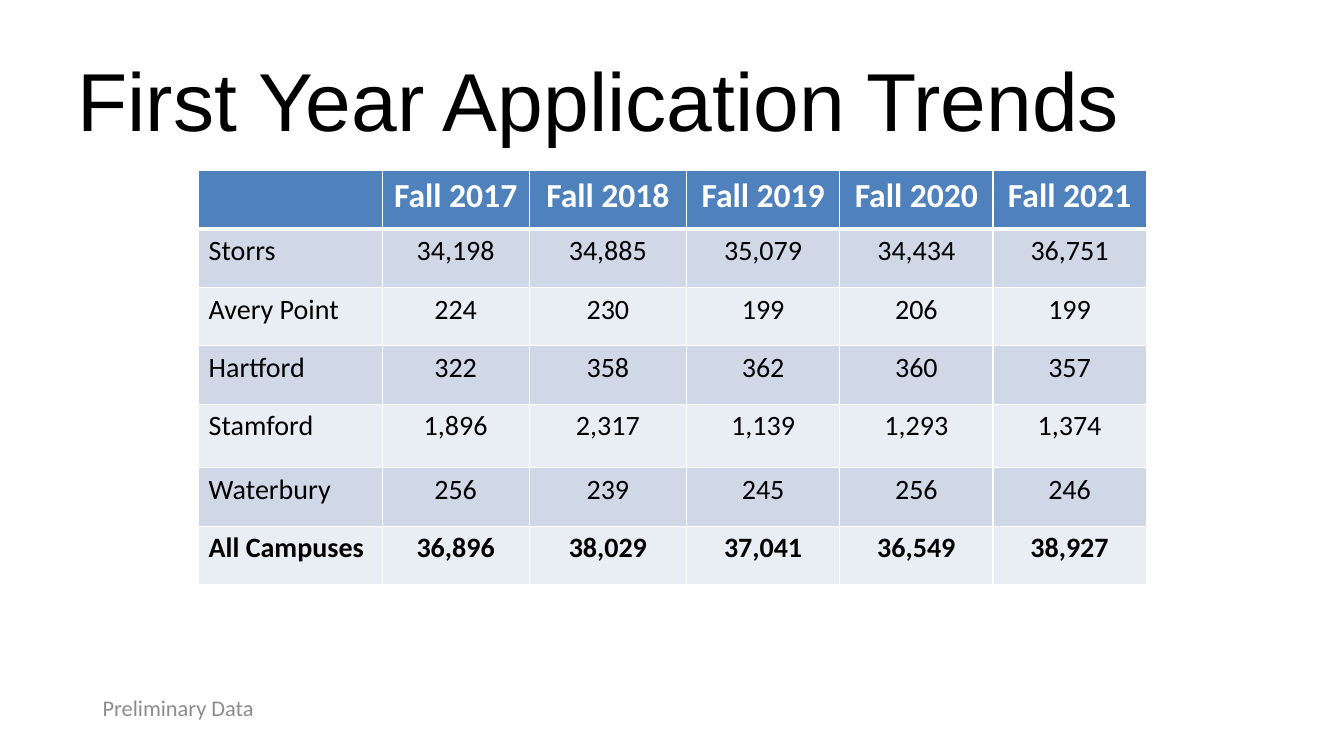
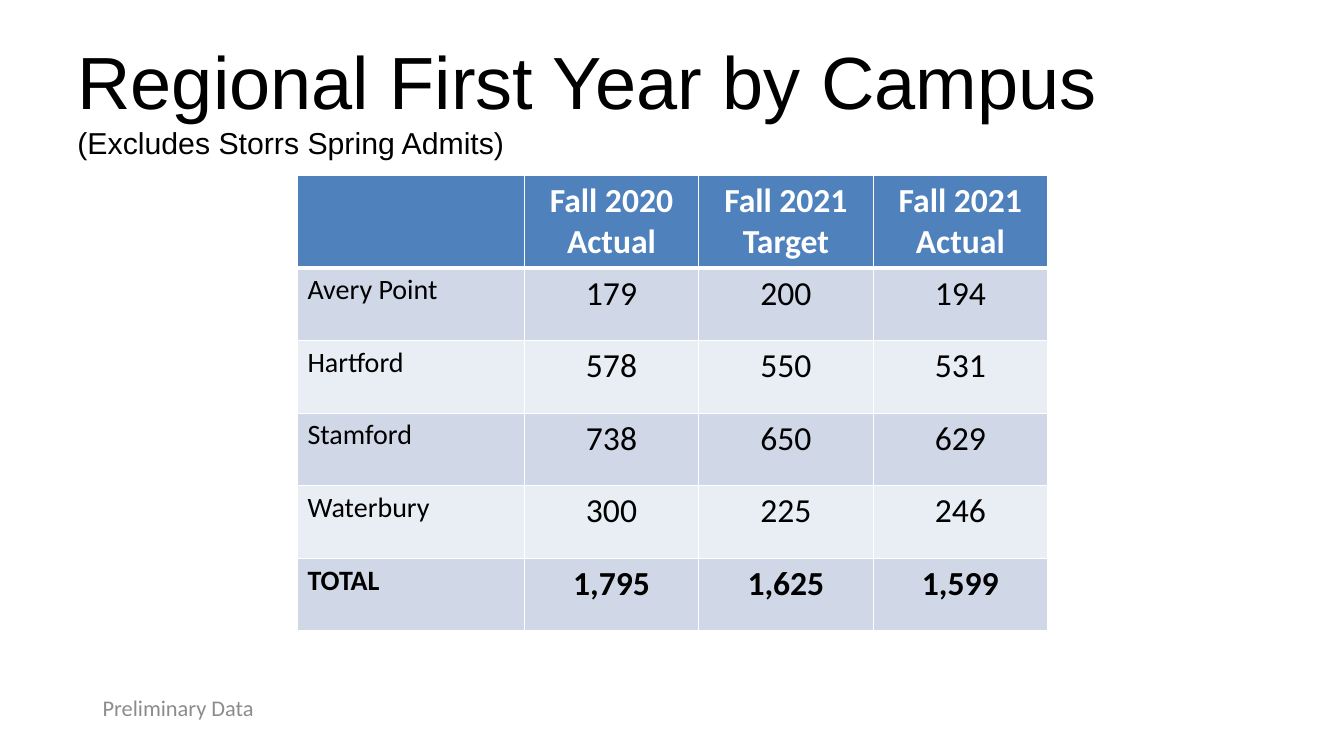
import lxml.etree
import pptx
import pptx.dml.color
import pptx.enum.text
import pptx.oxml.ns
import pptx.util

Inches = pptx.util.Inches
Pt = pptx.util.Pt
RGBColor = pptx.dml.color.RGBColor
Align = pptx.enum.text.PP_ALIGN

BLACK = RGBColor(0x00, 0x00, 0x00)
WHITE = RGBColor(0xFF, 0xFF, 0xFF)
GRAY = RGBColor(0x8C, 0x8C, 0x8C)
HEADER = RGBColor(0x4F, 0x81, 0xBD)
BANDS = (RGBColor(0xD0, 0xD8, 0xE8), RGBColor(0xE9, 0xED, 0xF4))


class Deck:
    """Holds the shared style and the slide being built."""

    title_font = "Arial"
    body_font = "Calibri"
    header_size = 24
    label_size = 20

    def __init__(self):
        self.prs = pptx.Presentation()
        self.prs.slide_width = Inches(13.33)
        self.prs.slide_height = Inches(7.5)

    def add_slide(self):
        self.s = self.prs.slides.add_slide(self.prs.slide_layouts[6])

    def style(self, r, font, size, color, bold=False):
        r.font.name = font
        r.font.size = Pt(size)
        r.font.color.rgb = color
        r.font.bold = bold

    def text_box(self, left, top, width, height):
        sp = self.s.shapes.add_textbox(Inches(left), Inches(top), Inches(width), Inches(height))
        tf = sp.text_frame
        tf.word_wrap = True
        tf.vertical_anchor = pptx.enum.text.MSO_ANCHOR.MIDDLE
        return tf

    def title(self, text, size, subtitle=None, subtitle_size=21.6):
        tf = self.text_box(0.67, 0.3, 12, 1.25)
        tf.margin_top, tf.margin_bottom = Inches(0.1), 0
        p = tf.paragraphs[0]
        p.text = text
        self.style(p.runs[0], self.title_font, size, BLACK)
        if subtitle:
            p.add_line_break()
            r = p.add_run()
            r.text = subtitle
            self.style(r, self.title_font, subtitle_size, BLACK)

    def footer(self, text):
        tf = self.text_box(0.92, 6.82, 3, 0.4)
        tf.text = text
        self.style(tf.paragraphs[0].runs[0], self.body_font, 16, GRAY)

    def borders(self, cell, row):
        tc_pr = cell._tc.get_or_add_tcPr()
        qn = pptx.oxml.ns.qn
        for side in ("lnL", "lnR", "lnT", "lnB"):
            width = 3 if (row, side) in ((0, "lnB"), (1, "lnT")) else 1
            ln = lxml.etree.SubElement(tc_pr, qn("a:" + side), w=str(Pt(width)))
            fill = lxml.etree.SubElement(ln, qn("a:solidFill"))
            lxml.etree.SubElement(fill, qn("a:srgbClr"), val=str(WHITE))

    def table(self, left, top, widths, heights, rows, value_size):
        frame = self.s.shapes.add_table(len(rows), len(widths), Inches(left), Inches(top),
                                        Inches(sum(widths)), Inches(sum(heights)))
        table = frame.table
        for column, width in zip(table.columns, widths):
            column.width = Inches(width)
        for row, height in zip(table.rows, heights):
            row.height = Inches(height)
        last = len(rows) - 1
        for i, values in enumerate(rows):
            for j, value in enumerate(values):
                cell = table.cell(i, j)
                self.borders(cell, i)
                cell.fill.solid()
                cell.fill.fore_color.rgb = BANDS[(i - 1) % 2] if i else HEADER
                p = cell.text_frame.paragraphs[0]
                p.text = value
                p.alignment = Align.CENTER if j else Align.LEFT
                if i == 0:
                    size = self.header_size
                else:
                    size = value_size if j else self.label_size
                for r in p.runs:
                    self.style(r, self.body_font, size, BLACK if i else WHITE, i in (0, last))


def main():
    deck = Deck()

    deck.add_slide()
    deck.title("First Year Application Trends", 58.7)
    applications = [
        ("", "Fall 2017", "Fall 2018", "Fall 2019", "Fall 2020", "Fall 2021"),
        ("Storrs", "34,198", "34,885", "35,079", "34,434", "36,751"),
        ("Avery Point", "224", "230", "199", "206", "199"),
        ("Hartford", "322", "358", "362", "360", "357"),
        ("Stamford", "1,896", "2,317", "1,139", "1,293", "1,374"),
        ("Waterbury", "256", "239", "245", "256", "246"),
        ("All Campuses", "36,896", "38,029", "37,041", "36,549", "38,927"),
    ]
    deck.table(1.97, 1.69, [1.82, 1.46, 1.56] + [1.52] * 3,
               [0.58] * 4 + [0.63] + [0.58] * 2, applications, 20)
    deck.footer("Preliminary Data")

    deck.add_slide()
    deck.title("Regional First Year by Campus", 52.8, "(Excludes Storrs Spring Admits)")
    regional = [
        ("", "Fall 2020 Actual", "Fall 2021 Target", "Fall 2021 Actual"),
        ("Avery Point", "179", "200", "194"),
        ("Hartford", "578", "550", "531"),
        ("Stamford", "738", "650", "629"),
        ("Waterbury", "300", "225", "246"),
        ("TOTAL", "1,795", "1,625", "1,599"),
    ]
    deck.table(2.95, 1.74, [2.25] + [1.73] * 3, [0.92] + [0.72] * 5, regional, 24)
    deck.footer("Preliminary Data")

    deck.prs.save("out.pptx")


if __name__ == "__main__":
    main()
